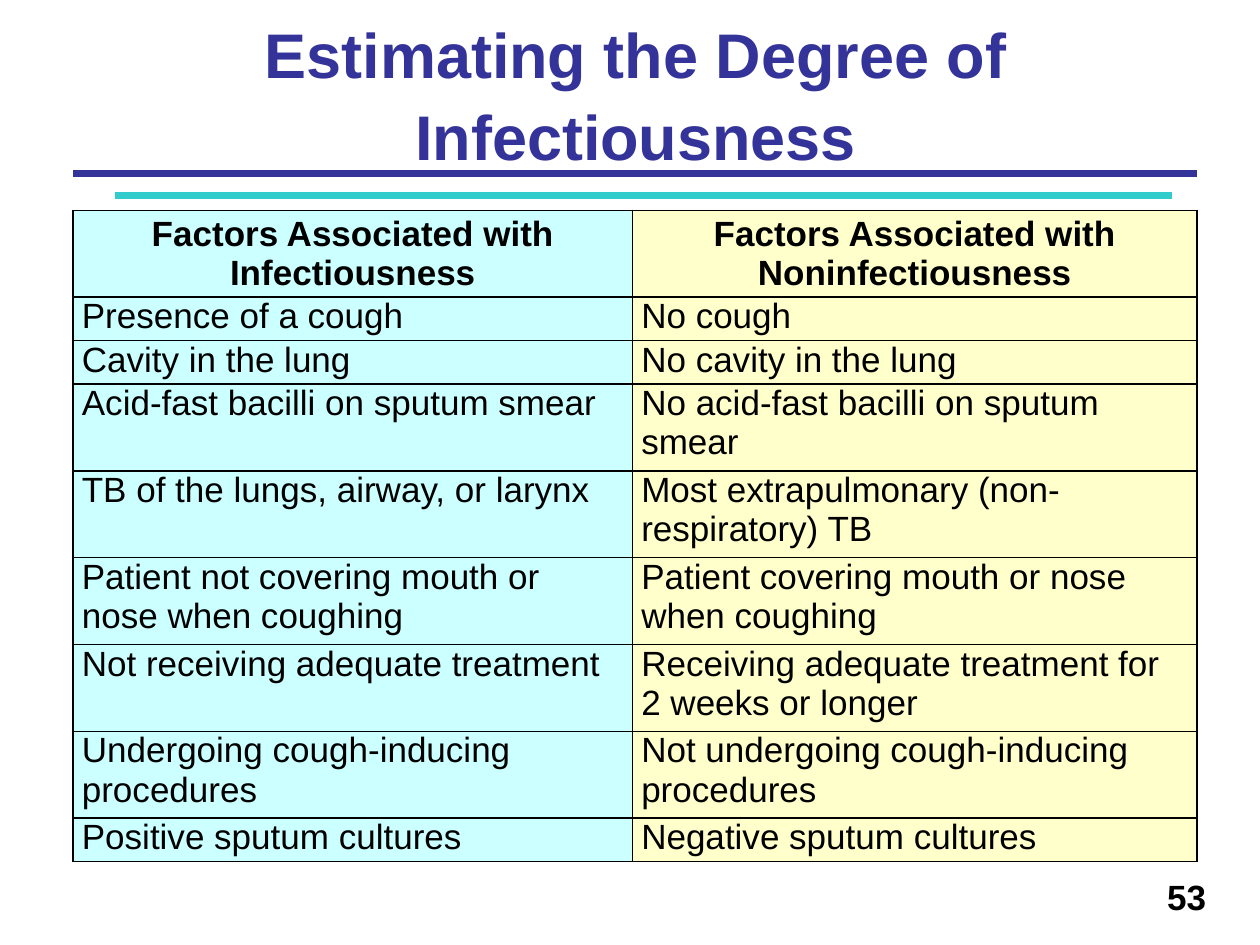
from lxml import etree
from pptx import Presentation
from pptx.dml.color import RGBColor
from pptx.enum import shapes, text
from pptx.oxml import ns
from pptx.util import Inches, Pt

COLORS = {"navy": "333399", "teal": "33CCCC", "black": "000000",
          "cyan": "CCFFFF", "yellow": "FFFFCC"}
LEFT, RIGHT = 0.58, 9.5

deck = Presentation()
deck.slide_width, deck.slide_height = Inches(10), Inches(7.5)
slide = deck.slides.add_slide(deck.slide_layouts[6])


def write(frame, wording, align, size=20, color="black", bold=False):
    frame.word_wrap = True
    paragraph = frame.paragraphs[0]
    paragraph.alignment = align
    run = paragraph.add_run()
    run.text = wording
    for name, value in {"name": "Arial", "size": Pt(size), "bold": bold}.items():
        setattr(run.font, name, value)
    run.font.color.rgb = RGBColor.from_string(COLORS[color])
    return paragraph


def add_border(cell, color="black", width=1):
    props = cell._tc.get_or_add_tcPr()
    for position, side in enumerate(("a:lnL", "a:lnR", "a:lnT", "a:lnB")):
        edge = etree.Element(ns.qn(side), w=str(Pt(width)))
        fill = etree.SubElement(edge, ns.qn("a:solidFill"))
        etree.SubElement(fill, ns.qn("a:srgbClr"), val=COLORS[color])
        props.insert(position, edge)


# Rules under the title
for start, end, y, color in ((LEFT, RIGHT, 1.38, "navy"), (0.91, 9.3, 1.55, "teal")):
    rule = slide.shapes.add_connector(
        shapes.MSO_CONNECTOR.STRAIGHT, *map(Inches, (start, y, end, y)))
    rule.line.color.rgb = RGBColor.from_string(COLORS[color])
    rule.line.width = Pt(4)
    etree.SubElement(rule._element.spPr, ns.qn("a:effectLst"))

# Title
title = slide.shapes.add_textbox(*map(Inches, (0.67, 0.17, 8.75, 1.25))).text_frame
title.vertical_anchor = text.MSO_ANCHOR.BOTTOM
heading = write(title, "Estimating the Degree of Infectiousness",
                text.PP_ALIGN.CENTER, 36, "navy", True)
heading.line_spacing = 1.08

# Page number
page = slide.shapes.add_textbox(*map(Inches, (4, 6.9, 5.67, 0.52))).text_frame
write(page, "53", text.PP_ALIGN.RIGHT, bold=True)

# Factors: lines of text in the row, infectious, noninfectious
FACTORS = [
    (2, "Factors Associated with Infectiousness", "Factors Associated with Noninfectiousness"),
    (1, "Presence of a cough", "No cough"),
    (1, "Cavity in the lung", "No cavity in the lung"),
    (2, "Acid-fast bacilli on sputum smear", "No acid-fast bacilli on sputum smear"),
    (2, "TB of the lungs, airway, or larynx", "Most extrapulmonary (non-respiratory) TB"),
    (2, "Patient not covering mouth or nose when coughing",
     "Patient covering mouth or nose when coughing"),
    (2, "Not receiving adequate treatment",
     "Receiving adequate treatment for 2 weeks or longer"),
    (2, "Undergoing cough-inducing procedures",
     "Not undergoing cough-inducing procedures"),
    (1, "Positive sputum cultures", "Negative sputum cultures"),
]
HEIGHT = 5.17
line_height = HEIGHT / sum(factor[0] for factor in FACTORS)
MARGINS = {"margin_left": Inches(0.07), "margin_right": Inches(0.07),
           "margin_top": 0, "margin_bottom": 0}

table = slide.shapes.add_table(
    len(FACTORS), 2, *map(Inches, (LEFT, 1.67, RIGHT - LEFT, HEIGHT))).table
for column, width in zip(table.columns, (4.44, 4.48)):
    column.width = Inches(width)

for row, (lines, *wordings) in enumerate(FACTORS):
    table.rows[row].height = Inches(lines * line_height)
    header = row == 0
    for column, (wording, color) in enumerate(zip(wordings, ("cyan", "yellow"))):
        cell = table.cell(row, column)
        for name, value in MARGINS.items():
            setattr(cell, name, value)
        cell.vertical_anchor = text.MSO_ANCHOR.MIDDLE if header else text.MSO_ANCHOR.TOP
        cell.fill.solid()
        cell.fill.fore_color.rgb = RGBColor.from_string(COLORS[color])
        write(cell.text_frame, wording,
              text.PP_ALIGN.CENTER if header else text.PP_ALIGN.LEFT, bold=header)
        add_border(cell)

deck.save("out.pptx")
